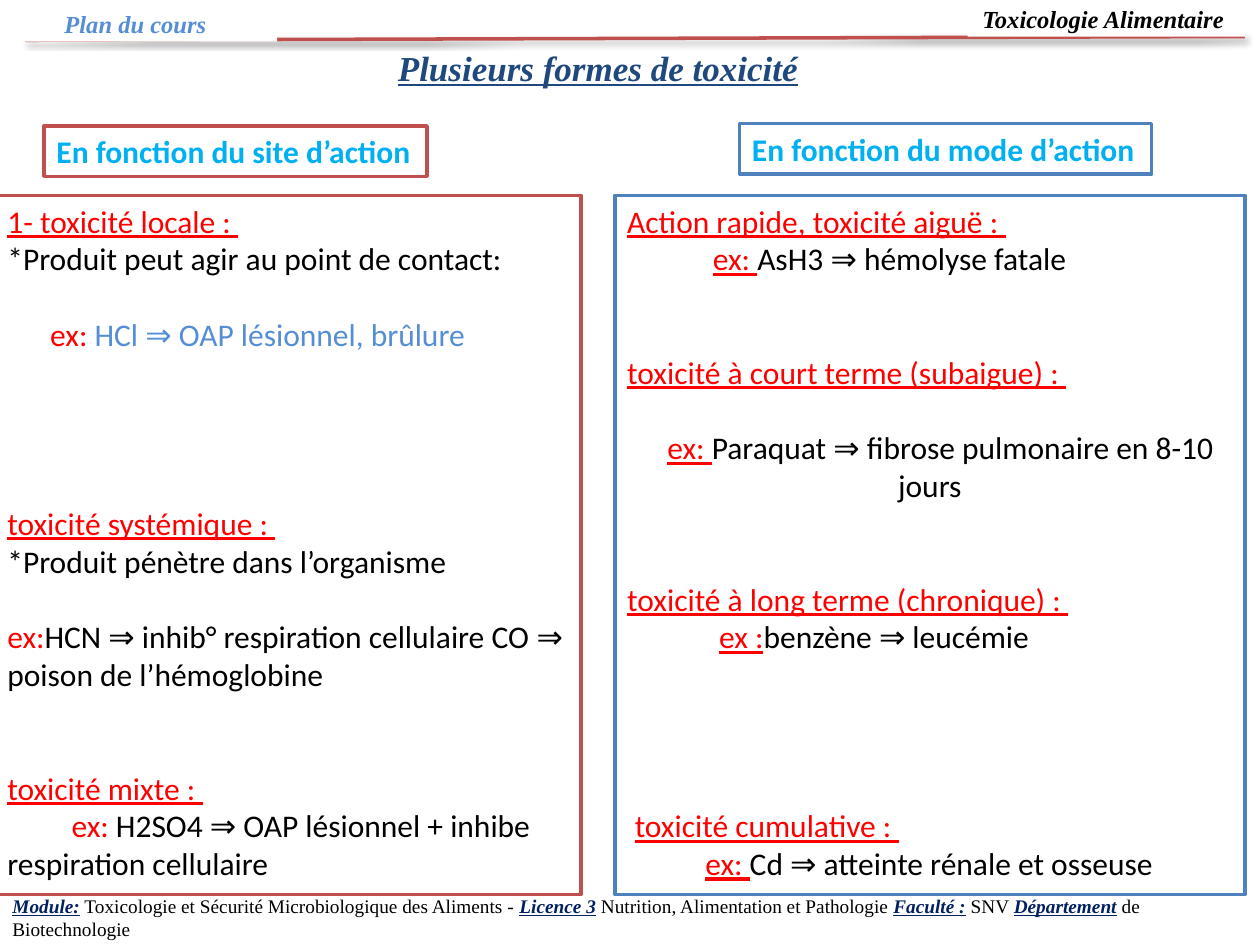
"""Build the slide on the forms of toxicity."""
from lxml import etree
from pptx import Presentation
from pptx.dml.color import RGBColor
from pptx.enum import shapes, text
from pptx.oxml.ns import qn
from pptx.util import Inches, Pt

HUES = {"red": "C0504D", "blue": "4F81BD", "sky": "00B0F0", "pale": "558ED5",
        "deep": "1F497D", "navy": "002060", "hot": "FF0000",
        "ink": "000000", "white": "FFFFFF"}
SERIF, SANS = "Times New Roman", "Calibri"
STEP = 21.6

STYLES = {"head": ("hot", True), "ex": ("hot", False), "exu": ("hot", True),
          "say": ("ink", False), "pale": ("pale", False)}

# Each line: blank steps above, first-line indent, centred, runs
SITE = [
    (0, 0, False, [("head", "1- toxicité locale : ")]),
    (0, 0, False, [("say", "*Produit peut agir au point de contact:")]),
    (1, 0.34, False, [("ex", "ex: "), ("pale", "HCl ⇒ OAP lésionnel, brûlure")]),
    (4, 0, False, [("head", "toxicité systémique : ")]),
    (0, 0, False, [("say", "*Produit pénètre dans l’organisme")]),
    (1, 0, False, [("ex", "ex:"), ("say", "HCN ⇒ inhib° respiration cellulaire "
                                          "CO ⇒ poison de l’hémoglobine")]),
    (2, 0, False, [("head", "toxicité mixte : ")]),
    (0, 0.51, False, [("ex", "ex: "), ("say", "H2SO4 ⇒ OAP lésionnel + inhibe "
                                              "respiration cellulaire")]),
]
MODE = [
    (0, 0, False, [("head", "Action rapide, toxicité aiguë : ")]),
    (0, 0.68, False, [("exu", "ex: "), ("say", "AsH3 ⇒ hémolyse fatale")]),
    (2, 0, False, [("head", "toxicité à court terme (subaigue) : ")]),
    (1, 0.17, True, [("exu", "ex: "), ("say", "Paraquat ⇒ fibrose pulmonaire "
                                              "en 8-10 jours")]),
    (2, 0, False, [("head", "toxicité à long terme (chronique) : ")]),
    (0, 0.73, False, [("exu", "ex :"), ("say", "benzène ⇒ leucémie")]),
    (4, 0.06, False, [("head", "toxicité cumulative : ")]),
    (0, 0.62, False, [("exu", "ex: "), ("say", "Cd ⇒ atteinte rénale et osseuse")]),
]
PANELS = [((-0.04, 1.55, 4.65, 5.55), "red", SITE),
          ((4.88, 1.55, 5, 5.55), "blue", MODE)]

# Each label: place, words, font, size, colour, border, italic, underlined, centred
LABELS = [
    ((7.68, 0, 2.2, 0.29), "Toxicologie Alimentaire ", SERIF, 14, "ink", None, True, False, True),
    ((0, 0.04, 2.2, 0.29), "Plan du cours ", SERIF, 14, "pale", None, True, False, True),
    ((3.06, 0.32, 3.4, 0.44), "Plusieurs formes de toxicité", SERIF, 20, "deep", None, True, True, False),
    ((0.35, 1, 3.04, 0.4), "En fonction du site d’action", SANS, 18, "sky", "red", False, False, False),
    ((5.87, 0.98, 3.27, 0.4), "En fonction du mode d’action", SANS, 18, "sky", "blue", False, False, False),
]
FOOT = [("Module:", True), (" Toxicologie et Sécurité Microbiologique des Aliments - ", False),
        ("Licence 3", True), (" Nutrition, Alimentation et Pathologie ", False),
        ("Faculté :", True), (" SNV ", False), ("Département", True),
        (" de Biotechnologie", False)]


def hue(name):
    return RGBColor.from_string(HUES[name])


def put_box(slide, place, edge=None):
    box = slide.shapes.add_shape(shapes.MSO_SHAPE.RECTANGLE, *map(Inches, place))
    box.shadow.inherit = False
    box.fill.solid()
    box.fill.fore_color.rgb = hue("white")
    if edge:
        box.line.color.rgb = hue(edge)
        box.line.width = Pt(2)
    else:
        box.line.fill.background()
    return box


def put_label(slide, place, words, face, size, tone, edge, slant, under, mid):
    if under:
        box = slide.shapes.add_textbox(*map(Inches, place))
    else:
        box = put_box(slide, place, edge)
    frame = box.text_frame
    frame.word_wrap = mid
    frame.vertical_anchor = text.MSO_ANCHOR.MIDDLE if mid else text.MSO_ANCHOR.TOP
    para = frame.paragraphs[0]
    para.text = words
    para.alignment = text.PP_ALIGN.CENTER if mid else text.PP_ALIGN.LEFT
    font = para.font
    font.name, font.size, font.bold = face, Pt(size), True
    font.italic, font.underline = slant, under
    font.color.rgb = hue(tone)


def put_panel(slide, place, edge, lines):
    frame = put_box(slide, place, edge).text_frame
    frame.word_wrap = True
    frame.vertical_anchor = text.MSO_ANCHOR.TOP
    for spot, (gap, dent, mid, runs) in enumerate(lines):
        para = frame.add_paragraph() if spot else frame.paragraphs[0]
        para.alignment = text.PP_ALIGN.CENTER if mid else text.PP_ALIGN.LEFT
        para.space_before = Pt(gap * STEP)
        para.font.name, para.font.size = SANS, Pt(18)
        para._p.get_or_add_pPr().set("indent", str(Inches(dent)))
        for style, words in runs:
            tone, under = STYLES[style]
            run = para.add_run()
            run.text = words
            run.font.color.rgb = hue(tone)
            run.font.underline = under


def put_foot(slide):
    frame = slide.shapes.add_textbox(*map(Inches, (0, 7.05, 10.05, 0.46))).text_frame
    frame.word_wrap = True
    frame.vertical_anchor = text.MSO_ANCHOR.MIDDLE
    para = frame.paragraphs[0]
    para.font.name, para.font.size = SERIF, Pt(11)
    for words, key in FOOT:
        run = para.add_run()
        run.text = words
        font = run.font
        font.bold = font.italic = font.underline = key
        font.color.rgb = hue("navy" if key else "ink")


def put_rule(slide):
    rule = slide.shapes.add_connector(shapes.MSO_CONNECTOR.STRAIGHT,
                                      *map(Inches, (0.2, 0.32, 9.88, 0.29)))
    rule.line.color.rgb = hue("red")
    rule.line.width = Pt(2)
    glow = etree.SubElement(rule._element.spPr, qn("a:effectLst"))
    shade = etree.SubElement(glow, qn("a:outerShdw"), blurRad=str(Pt(3.1)),
                             dist=str(Pt(1.6)), dir="5400000", rotWithShape="0")
    tone = etree.SubElement(shade, qn("a:srgbClr"), val=HUES["ink"])
    etree.SubElement(tone, qn("a:alpha"), val="38000")


def main():
    deck = Presentation()
    deck.slide_width, deck.slide_height = Inches(10), Inches(7.5)
    slide = deck.slides.add_slide(deck.slide_layouts[6])
    put_foot(slide)
    put_rule(slide)
    for label in LABELS:
        put_label(slide, *label)
    for panel in PANELS:
        put_panel(slide, *panel)
    deck.save("out.pptx")


if __name__ == "__main__":
    main()
